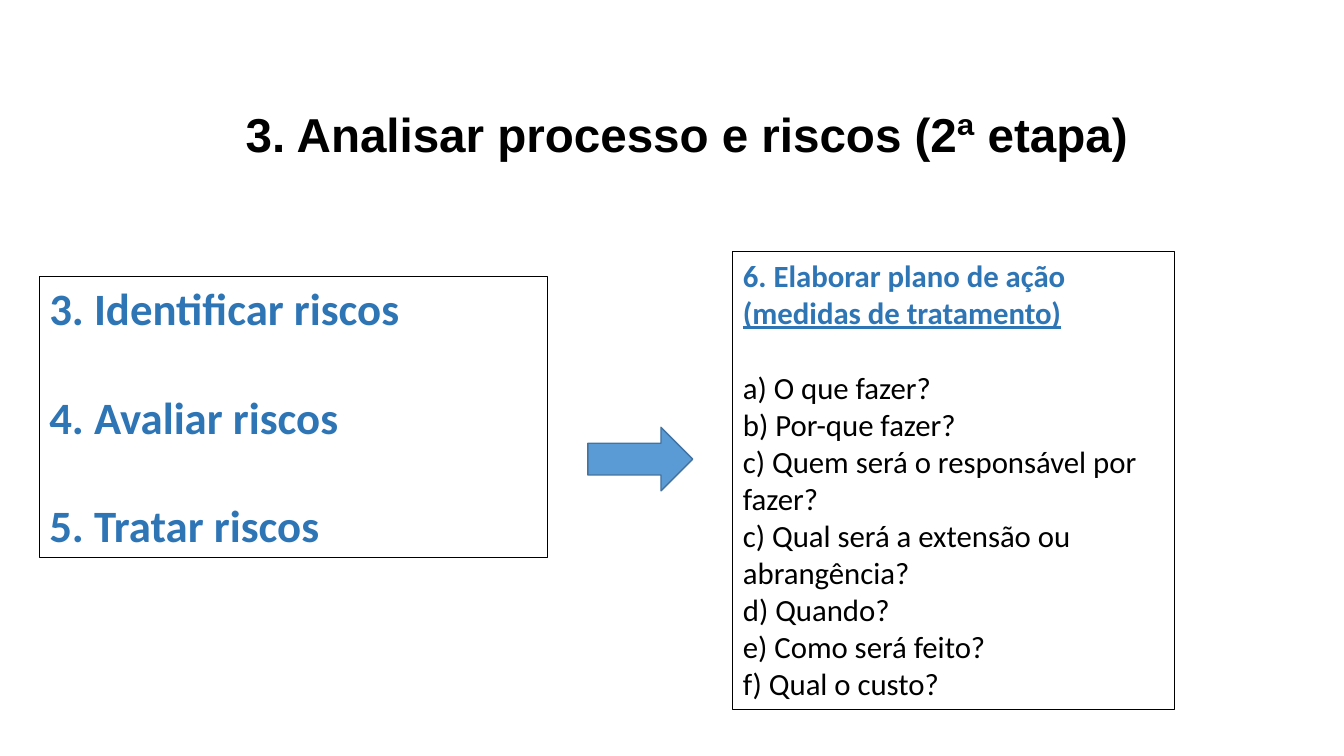
import dataclasses

import pptx
import pptx.dml.color
import pptx.enum.shapes
import pptx.enum.text
import pptx.util

COLOURS = {"white": "FFFFFF", "black": "000000", "heading": "2E75B6",
           "arrow": "5B9BD5", "arrow_edge": "43739E"}
SLIDE_WIDTH = pptx.util.Inches(13.33)
SLIDE_HEIGHT = pptx.util.Inches(7.5)
LINE_HEIGHT = 1.22  # Calibri line height as a share of its size
PP_ALIGN = pptx.enum.text.PP_ALIGN
MSO_ANCHOR = pptx.enum.text.MSO_ANCHOR
MSO_SHAPE = pptx.enum.shapes.MSO_SHAPE


@dataclasses.dataclass
class Line:
    text: str
    bold: bool = False
    colour: str = "black"
    gap_lines: int = 0
    underlined: str = ""


@dataclasses.dataclass
class Box:
    # Lengths are percentages of the slide's width and height
    left: float
    top: float
    width: float
    height: float
    lines: list[Line] = dataclasses.field(default_factory=list)
    size: int = 22
    font: str = "Calibri"
    align: PP_ALIGN = PP_ALIGN.LEFT
    anchor: MSO_ANCHOR = MSO_ANCHOR.TOP
    spacing: float = 1.0
    grow: bool = False
    preset: MSO_SHAPE = MSO_SHAPE.RECTANGLE
    fill: str = ""
    edge: str = "black"
    edge_width: float = 0.75


def colour(name: str) -> pptx.dml.color.RGBColor:
    return pptx.dml.color.RGBColor.from_string(COLOURS[name])


def write_line(paragraph, line: Line, box: Box) -> None:
    paragraph.alignment = box.align
    paragraph.line_spacing = box.spacing
    if line.gap_lines:
        paragraph.space_before = pptx.util.Pt(
            round(line.gap_lines * box.size * LINE_HEIGHT))
    paragraph.font.name = box.font
    paragraph.font.size = pptx.util.Pt(box.size)
    paragraph.font.bold = line.bold
    paragraph.font.color.rgb = colour(line.colour)
    paragraph.add_run().text = line.text
    if line.underlined:
        run = paragraph.add_run()
        run.text = line.underlined
        run.font.underline = True


def draw_box(slide, box: Box) -> None:
    shape = slide.shapes.add_shape(
        box.preset,
        int(SLIDE_WIDTH * box.left / 100), int(SLIDE_HEIGHT * box.top / 100),
        int(SLIDE_WIDTH * box.width / 100), int(SLIDE_HEIGHT * box.height / 100))
    shape.shadow.inherit = False
    if box.fill:
        shape.fill.solid()
        shape.fill.fore_color.rgb = colour(box.fill)
    else:
        shape.fill.background()
    shape.line.color.rgb = colour(box.edge)
    shape.line.width = pptx.util.Pt(box.edge_width)

    frame = shape.text_frame
    frame.word_wrap = True
    frame.vertical_anchor = box.anchor
    if box.grow:
        frame.auto_size = pptx.enum.text.MSO_AUTO_SIZE.SHAPE_TO_FIT_TEXT
    for index, line in enumerate(box.lines):
        paragraph = frame.add_paragraph() if index else frame.paragraphs[0]
        write_line(paragraph, line, box)


# Slide content
TITLE = Box(2.25, 14, 97.75, 8.4,
            [Line("3. Analisar processo e riscos (2ª etapa)", bold=True)],
            size=34, font="Arial", align=PP_ALIGN.CENTER,
            anchor=MSO_ANCHOR.MIDDLE, spacing=0.9, fill="white", edge="white")

RISK_STEPS = Box(2.93, 36.53, 37.8, 37.2,
                 [Line("3. Identificar riscos", True, "heading"),
                  Line("4. Avaliar riscos", True, "heading", gap_lines=1),
                  Line("5. Tratar riscos", True, "heading", gap_lines=1)],
                 size=32, grow=True)

ACTION_PLAN = Box(54.54, 33.33, 32.86, 60.53,
                  [Line("6. Elaborar plano de ação ", True, "heading",
                        underlined="(medidas de tratamento)"),
                   Line("a) O que fazer?", gap_lines=1),
                   Line("b) Por-que fazer?"),
                   Line("c) Quem será o responsável por fazer?"),
                   Line("c) Qual será a extensão ou abrangência?"),
                   Line("d) Quando?"),
                   Line("e) Como será feito?"),
                   Line("f) Qual o custo?")],
                  grow=True)

ARROW = Box(43.74, 56.53, 7.8, 8.4, preset=MSO_SHAPE.RIGHT_ARROW,
            fill="arrow", edge="arrow_edge", edge_width=1)


def main() -> None:
    presentation = pptx.Presentation()
    presentation.slide_width = SLIDE_WIDTH
    presentation.slide_height = SLIDE_HEIGHT
    slide = presentation.slides.add_slide(presentation.slide_layouts[6])
    for box in (TITLE, RISK_STEPS, ACTION_PLAN, ARROW):
        draw_box(slide, box)
    presentation.save("out.pptx")


if __name__ == "__main__":
    main()
